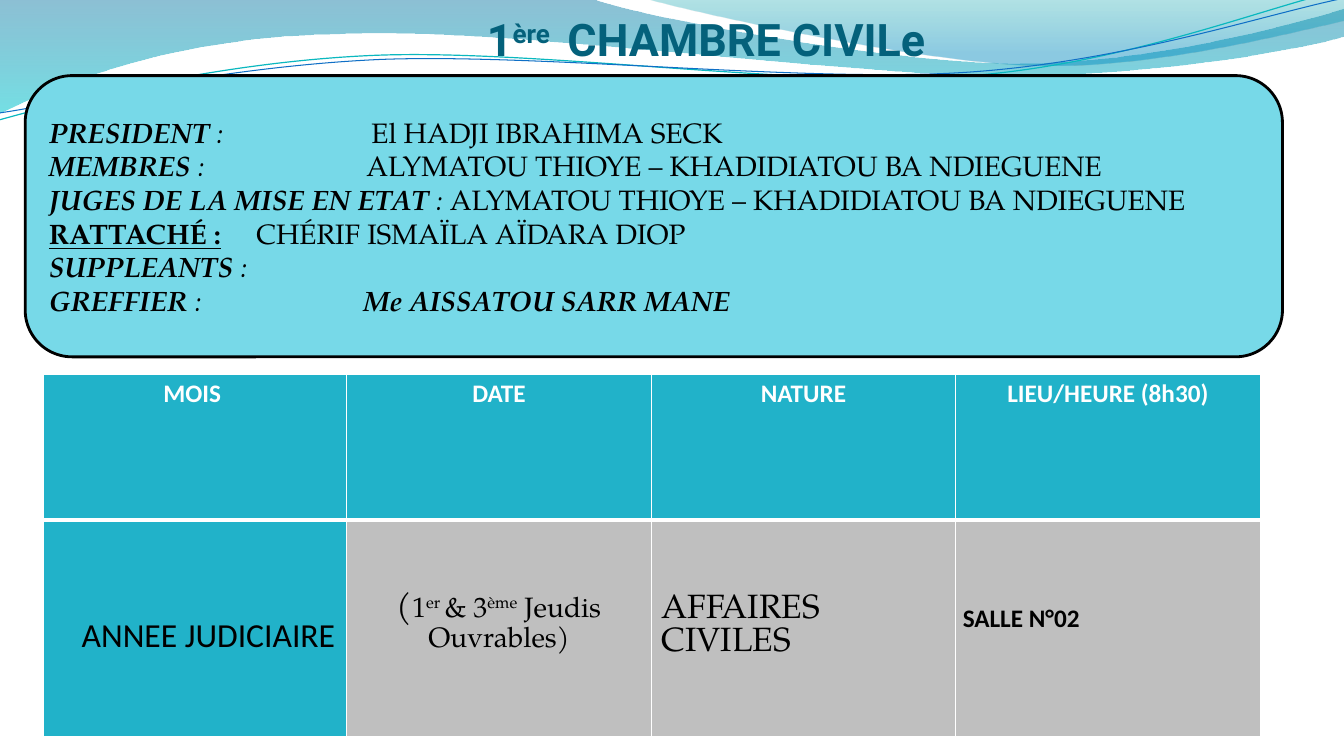
from lxml.etree import SubElement
from pptx import Presentation
from pptx.dml.color import RGBColor
from pptx.enum.shapes import MSO_SHAPE as Shape
from pptx.enum.text import MSO_ANCHOR as Anchor, PP_ALIGN as Align
from pptx.oxml import parse_xml
from pptx.oxml.ns import nsdecls, qn
from pptx.util import Inches, Pt

BLACK = RGBColor(0x00, 0x00, 0x00)
WHITE = RGBColor(0xFF, 0xFF, 0xFF)
GREY = RGBColor(0xBF, 0xBF, 0xBF)
TEAL = RGBColor(0x21, 0xB2, 0xC9)
PALE_TEAL = RGBColor(0x77, 0xD9, 0xE8)
DEEP_TEAL = RGBColor(0x04, 0x61, 0x7B)
WAVE_TEAL = RGBColor(0x0A, 0xB8, 0xBF)
WAVE_BLUE = RGBColor(0x0F, 0x6F, 0xC6)
SEA_BLUE = RGBColor(0x00, 0x74, 0xA1)
SEA_CYAN = RGBColor(0x00, 0xC6, 0xCF)
LAGOON = RGBColor(0x00, 0xA1, 0xA9)
SKY_BLUE = RGBColor(0x00, 0x8B, 0xBF)
SERIF, SANS, DISPLAY = "TeX Gyre Pagella", "Calibri", "Roboto"

# Each wave is a start point, then points (2 numbers) or Bezier curves (6 numbers),
# in hundredths of an inch.
LEFT_WAVE = [(0, 0), (587, -1), (634, 17, 885, 63, 1011, 63),
             (1138, 63, 1278, 26, 1333, 9), (1335, 36),
             (1311, 44, 1160, 76, 994, 75), (829, 75, 509, 28, 343, 34),
             (172, 36, 61, 83, -1, 113)]
RIGHT_WAVE = [(639, -1), (679, 11, 909, 62, 1025, 65),
              (1141, 69, 1282, 32, 1333, 21), (1333, 0)]
TEAL_LINE = [(-1, 119), (64, 101, 211, 62, 369, 55),
             (527, 48, 790, 87, 950, 76), (1110, 66, 1252, 8, 1331, -10)]
BLUE_LINE = [(0, 112), (63, 103, 218, 66, 378, 59),
             (537, 53, 796, 82, 955, 72), (1115, 62, 1255, 14, 1334, -2)]

# Runs are (text, style letters); the number is the tab stop of the names, in inches.
COURT = [
    (3.2, [("PRESIDENT ", "bi"), (":\t", "i"), ("El HADJI IBRAHIMA SECK", "")]),
    (3.15, [("MEMBRES ", "bi"), (":\t", "i"),
            ("ALYMATOU THIOYE – KHADIDIATOU BA NDIEGUENE", "")]),
    (None, [("JUGES DE LA MISE EN ETAT ", "bi"), (":", "i"),
            (" ALYMATOU THIOYE – KHADIDIATOU BA NDIEGUENE", "")]),
    (2.06, [("RATTACHÉ :", "bu"), ("\tCHÉRIF ISMAÏLA AÏDARA DIOP", "")]),
    (None, [("SUPPLEANTS", "bi"), (" :", "i")]),
    (3.12, [("GREFFIER ", "bi"), (":\t", "i"), ("Me AISSATOU SARR MANE", "bi")]),
]
HEADINGS = ["MOIS ", "DATE", " NATURE ", "LIEU/HEURE (8h30)"]


def add_run(paragraph, text, font, size, color, style=""):
    """Style letters: b bold, i italic, u underline, s superscript."""
    run = paragraph.add_run()
    run.text = text
    run.font.name, run.font.size = font, Pt(size)
    run.font.color.rgb = color
    run.font.bold, run.font.italic = "b" in style, "i" in style
    run.font.underline = "u" in style
    if "s" in style:
        run.font._element.set("baseline", "30000")


def add_wave(slide, wave, closed):
    """Build the outline through the end points, then bend its curved segments."""
    ends = [step[-2:] for step in wave]
    builder = slide.shapes.build_freeform(*ends[0], scale=Inches(0.01))
    builder.add_line_segments(ends[1:], close=closed)
    shape = builder.convert_to_shape()
    left, top = (min(values) for values in zip(*ends))
    segments = list(shape._element.iter(qn("a:lnTo")))
    for segment, step in zip(segments, wave[1:]):
        if len(step) == 6:
            curve = parse_xml(f'<a:cubicBezTo {nsdecls("a")}/>')
            for x, y in zip(step[::2], step[1::2]):
                SubElement(curve, qn("a:pt"), x=str(x - left), y=str(y - top))
            segment.getparent().replace(segment, curve)
    shape.shadow.inherit = False
    shape.fill.background()
    shape.line.fill.background()
    return shape


def add_sea(slide, wave, stops):
    """Closed wave with a downward gradient of (position, colour, opacity) stops."""
    properties = add_wave(slide, wave, True)._element.spPr
    stop_xml = "".join(
        f'<a:gs pos="{pos * 1000}"><a:srgbClr val="{color}">'
        f'<a:alpha val="{opacity * 1000}"/></a:srgbClr></a:gs>'
        for pos, color, opacity in stops)
    gradient = parse_xml(f'<a:gradFill {nsdecls("a")} rotWithShape="1"><a:gsLst>{stop_xml}'
                         '</a:gsLst><a:lin ang="5400000" scaled="0"/></a:gradFill>')
    properties.replace(properties.find(qn("a:noFill")), gradient)


def draw_waves(slide):
    add_sea(slide, LEFT_WAVE, [(0, SEA_BLUE, 45), (100, SEA_CYAN, 55)])
    add_sea(slide, RIGHT_WAVE, [(0, LAGOON, 30), (80, SKY_BLUE, 45)])
    for wave, color, width in ((TEAL_LINE, WAVE_TEAL, 0.85), (BLUE_LINE, WAVE_BLUE, 0.75)):
        line = add_wave(slide, wave, False).line
        line.color.rgb, line.width = color, Pt(width)


def draw_title(slide, box):
    frame = slide.shapes.add_textbox(*box).text_frame
    frame.word_wrap = True
    frame.vertical_anchor = Anchor.BOTTOM
    frame.margin_left = frame.margin_right = frame.margin_bottom = 0
    title = frame.paragraphs[0]
    title.alignment = Align.CENTER
    for text, style in (("1", "b"), ("ère ", "bs"), (" CHAMBRE CIVILe", "b")):
        add_run(title, text, DISPLAY, 32, DEEP_TEAL, style)


def draw_court(slide, box):
    panel = slide.shapes.add_shape(Shape.ROUNDED_RECTANGLE, *box)
    panel.shadow.inherit = False
    panel.fill.solid()
    panel.fill.fore_color.rgb = PALE_TEAL
    panel.line.color.rgb, panel.line.width = BLACK, Pt(2)
    frame = panel.text_frame
    frame.word_wrap = True
    frame.vertical_anchor = Anchor.MIDDLE
    for i, (tab, runs) in enumerate(COURT):
        role = frame.add_paragraph() if i else frame.paragraphs[0]
        role.alignment = Align.LEFT
        if tab:
            tabs = SubElement(role._p.get_or_add_pPr(), qn("a:tabLst"))
            SubElement(tabs, qn("a:tab"), pos=str(Inches(tab)), algn="l")
        for text, style in runs:
            add_run(role, text, SERIF, 20, BLACK, style)


def fill_cell(cell, fill, runs, align, spacing, left, top, bottom_line=1):
    """Runs are (text, font, size, colour, style); left and top are margins in inches."""
    cell.margin_left, cell.margin_top = Inches(left), Inches(top)
    cell.margin_right, cell.margin_bottom = Inches(min(left, 0.1)), 0
    paragraph = cell.text_frame.paragraphs[0]
    paragraph.alignment, paragraph.line_spacing = align, spacing
    for run in runs:
        add_run(paragraph, *run)
    properties = cell._tc.get_or_add_tcPr()
    for side, width in (("L", 1), ("R", 1), ("T", 1), ("B", bottom_line)):
        properties.append(parse_xml(
            f'<a:ln{side} {nsdecls("a")} w="{Pt(width)}"><a:solidFill>'
            f'<a:srgbClr val="{WHITE}"/></a:solidFill></a:ln{side}>'))
    cell.fill.solid()
    cell.fill.fore_color.rgb = fill


def draw_schedule(slide, box):
    left, top, width, height = box
    table = slide.shapes.add_table(2, len(HEADINGS), left, top, width, height).table
    table.horz_banding = False
    table.columns[0].width = Inches(3.01)
    for column in range(1, len(HEADINGS)):
        table.columns[column].width = Inches(3.02)
    table.rows[0].height = Inches(1.45)
    table.rows[1].height = height - table.rows[0].height
    for column, heading in enumerate(HEADINGS):
        fill_cell(table.cell(0, column), TEAL, [(heading, SANS, 18, WHITE, "b")],
                  Align.CENTER, 1.15, 0.07, 0, bottom_line=3)
    days = [("(", SERIF, 24, BLACK)] + [
        (text, SERIF, 20, BLACK, style) for text, style in
        (("1", ""), ("er ", "s"), ("& 3", ""), ("ème", "s"), (" Jeudis Ouvrables)", ""))]
    sessions = [
        (TEAL, [("ANNEE JUDICIAIRE", SANS, 24, BLACK)], Align.LEFT, 1.15, 0.38, 0.89),
        (GREY, days, Align.CENTER, Pt(20.7), 0.1, 0.77),
        (GREY, [("AFFAIRES CIVILES", SERIF, 24, BLACK)], Align.LEFT, Pt(23.6), 0.1, 0.74),
        (GREY, [("SALLE N°02", SANS, 18, BLACK, "b")], Align.LEFT, 1.15, 0.07, 0.78),
    ]
    for column, session in enumerate(sessions):
        fill_cell(table.cell(1, column), *session)


def main():
    deck = Presentation()
    deck.slide_width, deck.slide_height = Inches(13.33), Inches(7.5)
    slide = deck.slides.add_slide(deck.slide_layouts[6])
    draw_waves(slide)
    draw_title(slide, [Inches(n) for n in (2.13, 0.18, 9.75, 0.47)])
    draw_schedule(slide, [Inches(n) for n in (0.43, 3.71, 12.07, 3.6)])
    draw_court(slide, [Inches(n) for n in (0.25, 0.75, 12.47, 2.79)])
    deck.save("out.pptx")


if __name__ == "__main__":
    main()
